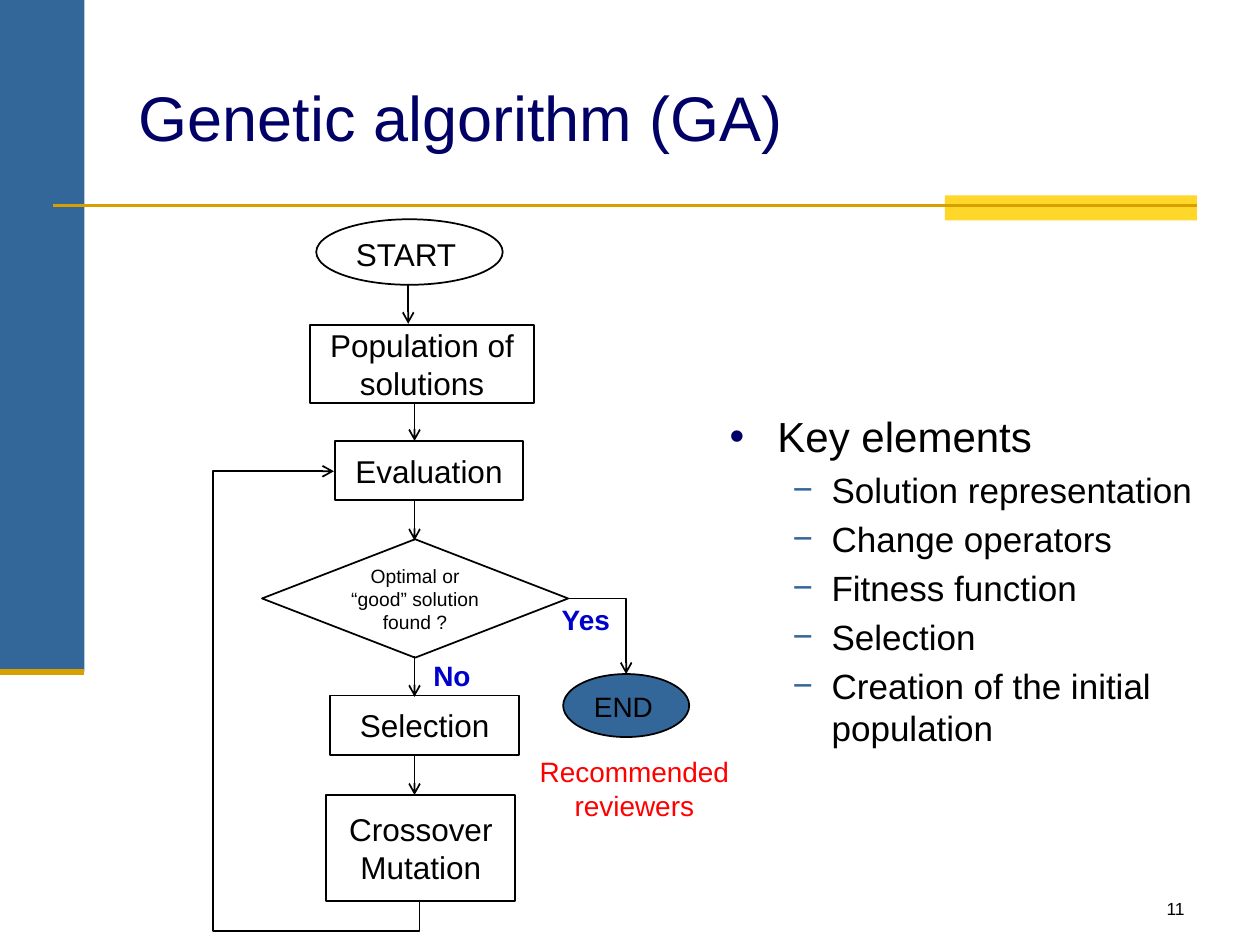
import pptx
import pptx.util
import pptx.dml.color
import pptx.enum.shapes
import pptx.enum.text
import pptx.oxml.ns
import lxml.etree

Inches = pptx.util.Inches
Pt = pptx.util.Pt
qn = pptx.oxml.ns.qn
MSO = pptx.enum.shapes.MSO_SHAPE
CONN = pptx.enum.shapes.MSO_CONNECTOR
ANCHOR = pptx.enum.text.MSO_ANCHOR
ALIGN = pptx.enum.text.PP_ALIGN
rgb = pptx.dml.color.RGBColor.from_string


def write(tf, lines, size, color="000000", align=ALIGN.LEFT, bold=False):
    tf.word_wrap = True
    for i, line in enumerate(lines):
        p = tf.paragraphs[0] if i == 0 else tf.add_paragraph()
        p.alignment = align
        r = p.add_run()
        r.text = line
        r.font.size = Pt(size)
        r.font.name = "Arial"
        r.font.bold = bold
        r.font.color.rgb = rgb(color)


def connect(kind, x1, y1, x2, y2, color="000000", width=1, arrow=True):
    c = s.shapes.add_connector(kind, Inches(x1), Inches(y1), Inches(x2), Inches(y2))
    c.line.color.rgb = rgb(color)
    c.line.width = Pt(width)
    if arrow:
        lxml.etree.SubElement(c.line._get_or_add_ln(), qn("a:tailEnd"), type="arrow")
    lxml.etree.SubElement(c._element.spPr, qn("a:effectLst"))
    return c


prs = pptx.Presentation()
prs.slide_width = Inches(10)
prs.slide_height = Inches(7.5)
s = prs.slides.add_slide(prs.slide_layouts[1])

for x, y, w, h, color in [(0, 0, 0.67, 5.33, "336699"), (7.5, 1.55, 2, 0.2, "FFD72B")]:
    sp = s.shapes.add_shape(MSO.RECTANGLE, Inches(x), Inches(y), Inches(w), Inches(h))
    sp.shadow.inherit = False
    sp.fill.solid()
    sp.fill.fore_color.rgb = rgb(color)
    sp.line.fill.background()
connect(CONN.STRAIGHT, 0.42, 1.63, 9.5, 1.63, "D89F00", 1.5, False)
connect(CONN.STRAIGHT, 0, 5.33, 0.67, 5.33, "D89F00", 3.5, False)

title = s.shapes.title
title.left, title.top, title.width, title.height = Inches(1), Inches(0.3), Inches(8.5), Inches(1.25)
title.text_frame.vertical_anchor = ANCHOR.MIDDLE
write(title.text_frame, ["Genetic algorithm (GA)"], 36, "000066")

nodes = [
    (MSO.RECTANGLE, 2.46, 2.58, 1.78, 0.62, "FFFFFF", ["Population of solutions"], 18),
    (MSO.RECTANGLE, 2.66, 3.5, 1.49, 0.47, "FFFFFF", ["Evaluation"], 18),
    (MSO.RECTANGLE, 2.62, 5.52, 1.5, 0.47, "FFFFFF", ["Selection"], 18),
    (MSO.RECTANGLE, 2.59, 6.31, 1.5, 0.84, "FFFFFF", ["Crossover", "Mutation"], 18),
    (MSO.FLOWCHART_DECISION, 2.08, 4.28, 2.43, 0.94, None, ["Optimal or “good” solution found ?"], 11),
    (MSO.OVAL, 2.51, 1.74, 1.48, 0.52, "FFFFFF", ["START"], 18),
    (MSO.OVAL, 4.47, 5.35, 1, 0.5, "336699", ["END"], 16),
]
for kind, x, y, w, h, fill, lines, size in nodes:
    sp = s.shapes.add_shape(kind, Inches(x), Inches(y), Inches(w), Inches(h))
    sp.shadow.inherit = False
    if fill:
        sp.fill.solid()
        sp.fill.fore_color.rgb = rgb(fill)
    else:
        sp.fill.background()
    sp.line.color.rgb = rgb("000000")
    sp.line.width = Pt(1)
    tf = sp.text_frame
    oval = kind == MSO.OVAL
    tf.vertical_anchor = ANCHOR.TOP if oval else ANCHOR.MIDDLE
    if kind == MSO.FLOWCHART_DECISION:
        tf.margin_left = tf.margin_right = Inches(0.08)
    write(tf, lines, size, align=ALIGN.LEFT if oval else ALIGN.CENTER)

for x, y1, y2 in [(3.24, 2.25, 2.57), (3.29, 3.19, 3.5), (3.29, 3.98, 4.29),
                  (3.29, 5.21, 5.53), (3.29, 5.99, 6.31)]:
    connect(CONN.STRAIGHT, x, y1, x, y2)

end_arrow = connect(CONN.ELBOW, 4.51, 4.75, 4.97, 5.35)
end_arrow._element.spPr.find(qn("a:prstGeom")).set("prst", "bentConnector2")

loop = connect(CONN.ELBOW, 1.29, 5.1, 4.69, 5.78)
xfrm = loop._element.spPr.find(qn("a:xfrm"))
xfrm.set("rot", "5400000")
xfrm.set("flipH", "1")
geom = loop._element.spPr.find(qn("a:prstGeom"))
geom.set("prst", "bentConnector4")
av = geom.find(qn("a:avLst"))
if av is None:
    av = lxml.etree.SubElement(geom, qn("a:avLst"))
for name, value in [("adj1", -7300), ("adj2", 241000)]:
    lxml.etree.SubElement(av, qn("a:gd"), name=name, fmla=f"val {value}")

labels = [
    (4.15, 5.94, 1.77, 0.64, ["Recommended", "reviewers"], 16, "FF0000", ALIGN.CENTER, False),
    (4.36, 4.73, 0.72, 0.37, ["Yes"], 16, "0000CC", ALIGN.LEFT, True),
    (3.34, 5.18, 0.51, 0.37, ["No"], 16, "0000CC", ALIGN.LEFT, True),
    (7.42, 7.08, 2.08, 0.25, ["11"], 10, "000000", ALIGN.RIGHT, False),
]
for x, y, w, h, lines, size, color, align, bold in labels:
    tb = s.shapes.add_textbox(Inches(x), Inches(y), Inches(w), Inches(h))
    write(tb.text_frame, lines, size, color, align, bold)

body = s.placeholders[1]
body.left, body.top, body.width, body.height = Inches(5.69), Inches(3.21), Inches(4.14), Inches(3.5)
tf = body.text_frame
tf.auto_size = pptx.enum.text.MSO_AUTO_SIZE.NONE
write(tf, ["Key elements", "Solution representation", "Change operators", "Fitness function",
           "Selection", "Creation of the initial population"], 20)
tf.paragraphs[0].runs[0].font.size = Pt(24)
for i, p in enumerate(tf.paragraphs):
    p.level = min(i, 1)
    margin, indent, bullet, color = (0.81, -0.31, "−", "336699") if i else (0.38, -0.38, "•", "000066")
    p.space_before = Pt(4 if i else 4.8)
    pPr = p._p.get_or_add_pPr()
    pPr.set("marL", str(Inches(margin)))
    pPr.set("indent", str(Inches(indent)))
    clr = lxml.etree.SubElement(pPr, qn("a:buClr"))
    lxml.etree.SubElement(clr, qn("a:srgbClr"), val=color)
    lxml.etree.SubElement(pPr, qn("a:buFont"), typeface="Arial")
    lxml.etree.SubElement(pPr, qn("a:buChar"), char=bullet)

prs.save("out.pptx")
